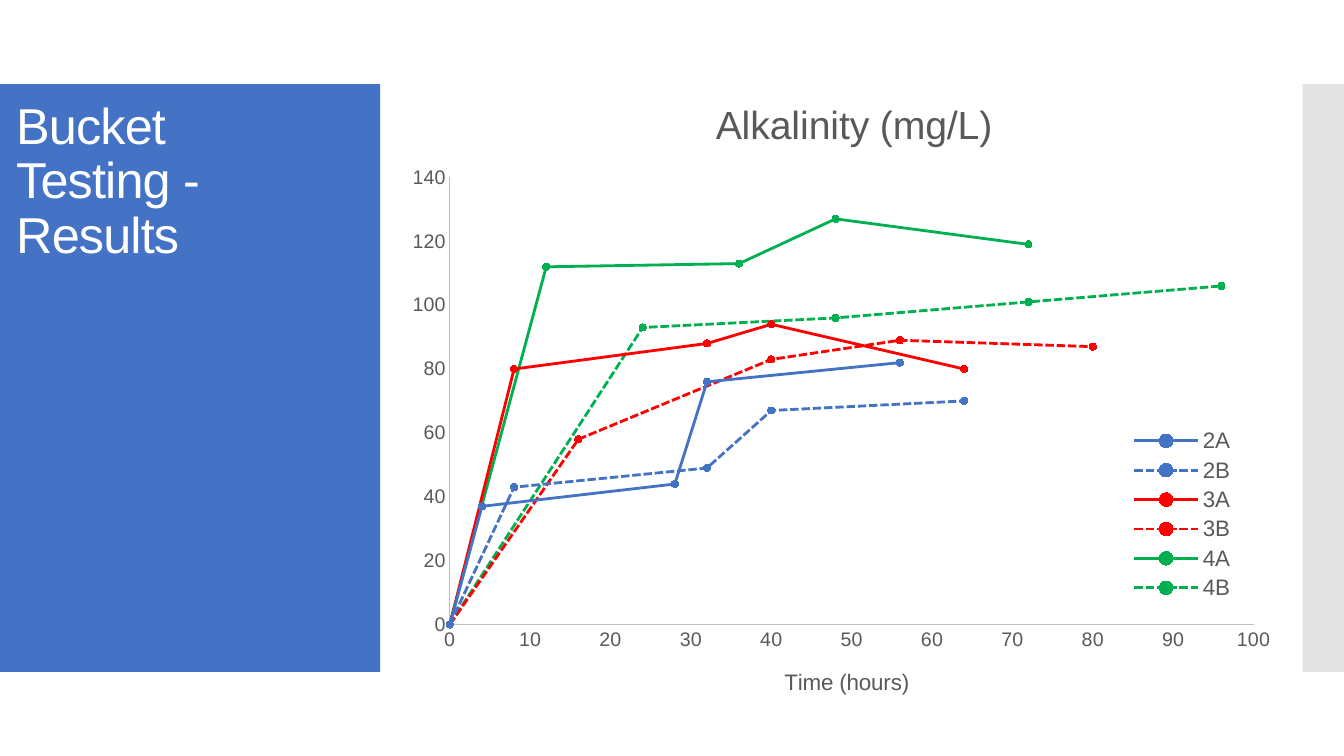
from lxml.etree import SubElement
from pptx import Presentation
from pptx.chart.data import XyChartData
from pptx.dml.color import RGBColor
from pptx.enum.chart import XL_CHART_TYPE as ChartType, XL_LEGEND_POSITION as LegendPos
from pptx.enum.chart import XL_MARKER_STYLE as Marker, XL_TICK_MARK as Tick
from pptx.enum.dml import MSO_LINE as Dash
from pptx.enum.shapes import MSO_SHAPE as Shape
from pptx.oxml import parse_xml
from pptx.oxml.ns import nsdecls, qn
from pptx.util import Pt

# Content
HEADING = "Bucket Testing - Results"
CHART_TITLE, TIME_TITLE = "Alkalinity (mg/L)", "Time (hours)"
BLUE, RED, GREEN, GREY = "4472C4", "FF0000", "00B050", "595959"
BUCKETS = [  # name, colour, dashed, (hours, mg/L) readings
    ("2A", BLUE, False, [(0, 0), (4, 37), (28, 44), (32, 76), (56, 82)]),
    ("2B", BLUE, True, [(0, 0), (8, 43), (32, 49), (40, 67), (64, 70)]),
    ("3A", RED, False, [(0, 0), (8, 80), (32, 88), (40, 94), (64, 80)]),
    ("3B", RED, True, [(0, 0), (16, 58), (40, 83), (56, 89), (80, 87)]),
    ("4A", GREEN, False, [(0, 0), (12, 112), (36, 113), (48, 127), (72, 119)]),
    ("4B", GREEN, True, [(0, 0), (24, 93), (48, 96), (72, 101), (96, 106)]),
]
BANDS = [(0, 271.5, BLUE, 100), (930.5, 29.5, "C8C8C8", 50)]  # left, width, colour, opacity
BAND_TOP, BAND_HEIGHT = 60, 420

# Chart parts: index of the layout element, then fractions of the chart frame
LAYOUTS = {
    "c:plotArea": (0, {"x": 0.06, "y": 0.17, "w": 0.9, "h": 0.69}),
    "c:legend": (1, {"x": 0.82, "y": 0.55, "w": 0.12, "h": 0.28}),
    "c:chart/c:title": (1, {"x": 0.35, "y": 0.04}),
    "c:valAx[1]/c:title": (1, {"x": 0.43, "y": 0.92}),
}


def rgb(value):
    return RGBColor.from_string(value)


def set_all(target, values):
    for name, value in values.items():
        setattr(target, name, value)


def style_font(font, size, color):
    set_all(font, {"name": "Arial", "size": Pt(size), "bold": False})
    font.color.rgb = rgb(color)


def write_title(title, text, size):
    title.text_frame.text = text
    style_font(title.text_frame.paragraphs[0].runs[0].font, size, GREY)


def place(part, index, fractions):
    for old in part.findall(qn("c:layout")):
        part.remove(old)
    layout = parse_xml(f"<c:layout {nsdecls('c')}><c:manualLayout/></c:layout>")
    manual = layout[0]
    if part.tag == qn("c:plotArea"):
        SubElement(manual, qn("c:layoutTarget")).set("val", "inner")
    for key in "xy":
        SubElement(manual, qn(f"c:{key}Mode")).set("val", "edge")
    for key, value in fractions.items():
        SubElement(manual, qn(f"c:{key}")).set("val", str(value))
    part.insert(index, layout)


deck = Presentation()
set_all(deck, {"slide_width": Pt(960), "slide_height": Pt(540)})
slide = deck.slides.add_slide(deck.slide_layouts[6])

# Side bands
for left, width, color, opacity in BANDS:
    band = slide.shapes.add_shape(
        Shape.RECTANGLE, Pt(left), Pt(BAND_TOP), Pt(width), Pt(BAND_HEIGHT))
    band.shadow.inherit = False
    band.fill.solid()
    band.fill.fore_color.rgb = rgb(color)
    band.line.fill.background()
    if opacity < 100:
        tint = band.fill._xPr.find(".//" + qn("a:srgbClr"))
        SubElement(tint, qn("a:alpha")).set("val", str(opacity * 1000))

# Alkalinity chart
data = XyChartData()
for name, _, _, readings in BUCKETS:
    bucket = data.add_series(name)
    for hours, alkalinity in readings:
        bucket.add_data_point(hours, alkalinity)
chart = slide.shapes.add_chart(
    ChartType.XY_SCATTER_LINES, Pt(283), Pt(48), Pt(638), Pt(463), data).chart
style_font(chart.font, 10, "000000")
write_title(chart.chart_title, CHART_TITLE, 28)

for line, (_, color, dashed, _) in zip(chart.plots[0].series, BUCKETS):
    line.smooth = False
    line.format.line.width = Pt(2)
    line.format.line.color.rgb = rgb(color)
    if dashed:
        line.format.line.dash_style = Dash.SQUARE_DOT
    set_all(line.marker, {"style": Marker.CIRCLE, "size": 5})
    line.marker.format.fill.solid()
    line.marker.format.fill.fore_color.rgb = rgb(color)
    line.marker.format.line.color.rgb = rgb(color)

# Axes
for axis, top, step in ((chart.category_axis, 100, 10), (chart.value_axis, 140, 20)):
    set_all(axis, {
        "minimum_scale": 0, "maximum_scale": top, "major_unit": step,
        "has_major_gridlines": False,
        "major_tick_mark": Tick.NONE, "minor_tick_mark": Tick.NONE})
    set_all(axis.tick_labels, {"number_format": "0", "number_format_is_linked": False})
    style_font(axis.tick_labels.font, 14, GREY)
    axis.format.line.width = Pt(0.75)
    axis.format.line.color.rgb = rgb("BFBFBF")
write_title(chart.category_axis.axis_title, TIME_TITLE, 16)

# Legend and placing of the chart parts
chart.has_legend = True
set_all(chart.legend, {"position": LegendPos.CORNER, "include_in_layout": True})
style_font(chart.legend.font, 16, GREY)
for query, (index, fractions) in LAYOUTS.items():
    place(chart._chartSpace.xpath(".//" + query)[0], index, fractions)
chart._chartSpace.xpath("c:chart/c:title/c:overlay")[0].set("val", "1")

# Heading
heading = slide.shapes.add_textbox(Pt(4.5), Pt(68.5), Pt(232), Pt(362)).text_frame
heading.word_wrap = True
paragraph = heading.paragraphs[0]
paragraph.line_spacing = 0.9
run = paragraph.add_run()
run.text = HEADING
style_font(run.font, 36, "FFFFFF")
run.font._element.set("spc", "-60")

deck.save("out.pptx")
